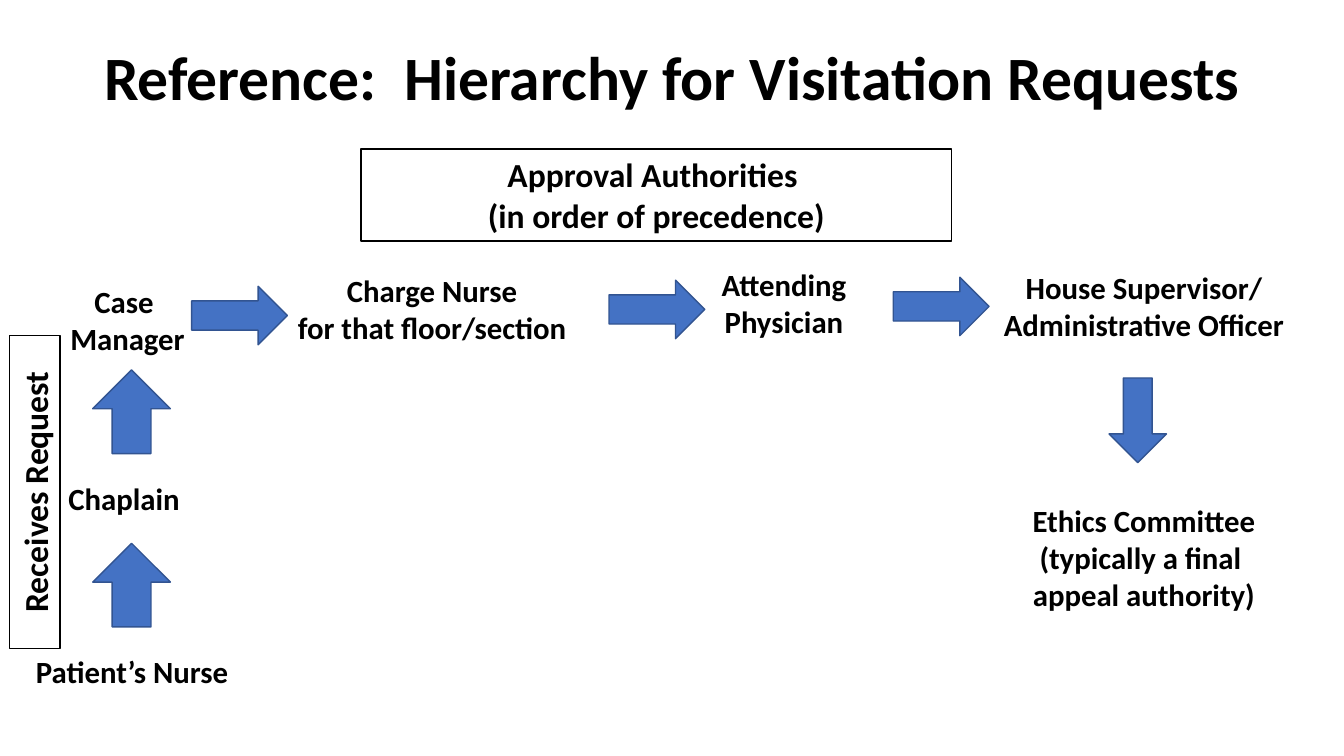
from dataclasses import dataclass

from pptx import Presentation
from pptx.dml.color import RGBColor as Rgb
from pptx.enum.shapes import MSO_SHAPE as Kind
from pptx.enum.text import MSO_ANCHOR as Anchor, MSO_AUTO_SIZE as Fit, PP_ALIGN as Align
from pptx.slide import Slide
from pptx.text.text import TextFrame
from pptx.util import Inches, Pt

FONT = "Calibri"
COLORS = {"text": "000000", "back": "FFFFFF", "arrow": "4472C4", "edge": "325491"}


@dataclass
class Label:
    text: str
    left: float
    top: float
    width: float
    height: float
    size: int = 22
    framed: bool = False
    turn: int = 0


@dataclass
class Arrow:
    kind: Kind
    left: float
    top: float
    width: float
    height: float


ROLES = [
    Label("Patient’s Nurse ", 0.23, 6.43, 2.23, 0.47),
    Label("Chaplain ", 0.15, 4.71, 2.23, 0.47),
    Label("Case \nManager", 0.15, 2.76, 2.23, 0.84),
    Label("Charge Nurse \nfor that floor/section ", 2.46, 2.65, 3.72, 0.84),
    Label("Attending \nPhysician ", 6.72, 2.59, 2.18, 0.84),
    Label("House Supervisor/\nAdministrative Officer", 9.55, 2.62, 3.59, 0.84),
    Label("Ethics Committee\n(typically a final \nappeal authority)", 9.74, 4.93, 3.21, 1.21),
]

HEADS = [
    Label("Receives Request", -1.21, 4.63, 3.11, 0.5, 24, True, 270),
    Label("Approval Authorities \n(in order of precedence)", 3.58, 1.48, 5.86, 0.91, 24, True),
]

ARROWS = [
    *(Arrow(Kind.UP_ARROW, 0.92, top, 0.77, 0.83) for top in (5.39, 3.67)),
    *(
        Arrow(Kind.RIGHT_ARROW, left, top, 0.95, 0.58)
        for left, top in ((1.9, 2.84), (6.04, 2.78), (8.86, 2.75))
    ),
    Arrow(Kind.DOWN_ARROW, 11, 3.75, 0.57, 0.84),
]


def color(name: str) -> Rgb:
    return Rgb.from_string(COLORS[name])


def style(frame: TextFrame, size: int) -> None:
    frame.word_wrap = True
    for para in frame.paragraphs:
        para.alignment = Align.CENTER
        for run in para.runs:
            run.font.name = FONT
            run.font.size = Pt(size)
            run.font.bold = True
            run.font.color.rgb = color("text")


def paint(shape, fill: str, line: str) -> None:
    shape.fill.solid()
    shape.fill.fore_color.rgb = color(fill)
    shape.line.color.rgb = color(line)
    shape.line.width = Pt(1)


def add_title(slide: Slide, text: str) -> None:
    title = slide.shapes.title
    title.left, title.top = Inches(0.92), Inches(0.4)
    title.width, title.height = Inches(11.5), Inches(0.8)
    frame = title.text_frame
    frame.text = text
    frame.auto_size = Fit.NONE
    frame.vertical_anchor = Anchor.MIDDLE
    frame.paragraphs[0].line_spacing = 0.9
    style(frame, 44)


def add_label(slide: Slide, label: Label) -> None:
    box = slide.shapes.add_textbox(
        Inches(label.left), Inches(label.top), Inches(label.width), Inches(label.height)
    )
    box.rotation = label.turn
    box.text_frame.text = label.text
    box.text_frame.auto_size = Fit.SHAPE_TO_FIT_TEXT
    style(box.text_frame, label.size)
    if label.framed:
        paint(box, "back", "text")


def add_arrow(slide: Slide, arrow: Arrow) -> None:
    shape = slide.shapes.add_shape(
        arrow.kind,
        Inches(arrow.left), Inches(arrow.top), Inches(arrow.width), Inches(arrow.height),
    )
    shape.shadow.inherit = False
    paint(shape, "arrow", "edge")


def main() -> None:
    deck = Presentation()
    deck.slide_width, deck.slide_height = Inches(13.33), Inches(7.5)
    slide = deck.slides.add_slide(deck.slide_layouts[5])
    add_title(slide, "Reference:  Hierarchy for Visitation Requests")
    for role in ROLES:
        add_label(slide, role)
    for arrow in ARROWS:
        add_arrow(slide, arrow)
    for head in HEADS:
        add_label(slide, head)
    deck.save("out.pptx")


if __name__ == "__main__":
    main()
